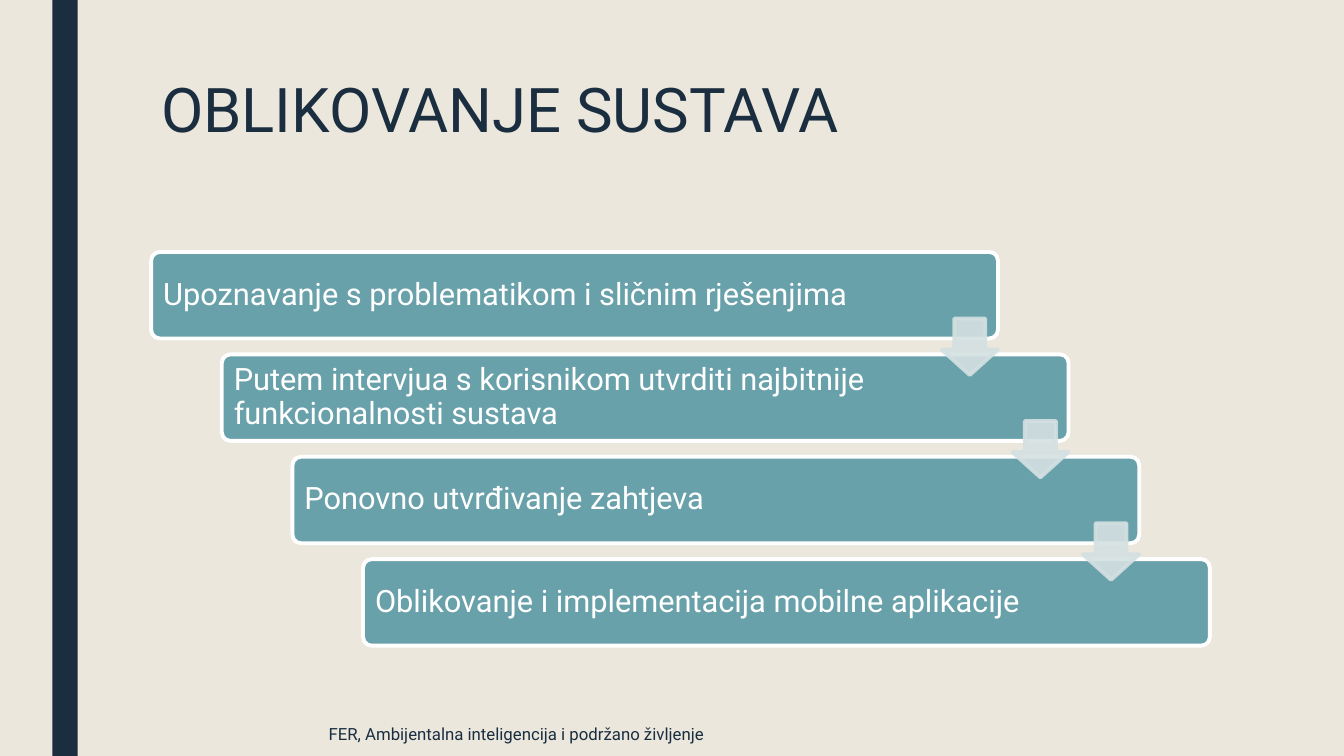
from lxml.etree import SubElement
from pptx import Presentation
from pptx.dml.color import RGBColor
from pptx.enum.shapes import MSO_SHAPE
from pptx.enum.text import MSO_ANCHOR, PP_ALIGN
from pptx.oxml.ns import qn
from pptx.util import Cm, Pt

NAVY, TEAL, PALE, WHITE, SAND = "1A2E40", "69A1AB", "D4E0E2", "FFFFFF", "EBE7DD"
STEPS = [
    "Upoznavanje s problematikom i sličnim rješenjima",
    "Putem intervjua s korisnikom utvrditi najbitnije funkcionalnosti sustava",
    "Ponovno utvrđivanje zahtjeva",
    "Oblikovanje i implementacija mobilne aplikacije",
]


def rgb(value):
    return RGBColor.from_string(value)


class Deck:
    font = "Roboto"
    outline = Pt(2.75)

    def __init__(self, slide):
        self.s = slide
        fill = slide.background.fill
        fill.solid()
        fill.fore_color.rgb = rgb(SAND)

    def shape(self, kind, x, y, w, h, fill, line=None, adj=()):
        sp = self.s.shapes.add_shape(kind, Cm(x), Cm(y), Cm(w), Cm(h))
        sp.shadow.inherit = False
        sp.fill.solid()
        sp.fill.fore_color.rgb = rgb(fill)
        if line:
            sp.line.color.rgb = rgb(line)
            sp.line.width = self.outline
        else:
            sp.line.fill.background()
        for i, value in enumerate(adj):
            sp.adjustments[i] = value
        return sp

    def label(self, sp, text, size, color, anchor, spacing=1.0):
        tf = sp.text_frame
        tf.text = text
        tf.word_wrap = True
        tf.vertical_anchor = anchor
        p = tf.paragraphs[0]
        p.alignment = PP_ALIGN.LEFT
        p.line_spacing = spacing
        r = p.runs[0]
        r.font.name = self.font
        r.font.size = Pt(size)
        r.font.color.rgb = rgb(color)

    def text(self, x, y, w, h, text, size, anchor, spacing=1.0):
        sp = self.s.shapes.add_textbox(Cm(x), Cm(y), Cm(w), Cm(h))
        self.label(sp, text, size, NAVY, anchor, spacing)

    def step(self, x, y, w, h, text):
        sp = self.shape(MSO_SHAPE.ROUNDED_RECTANGLE, x, y, w, h, TEAL, WHITE, [0.1])
        tf = sp.text_frame
        tf.margin_left, tf.margin_right = Cm(0.24), Cm(3.4)
        self.label(sp, text, 22, WHITE, MSO_ANCHOR.MIDDLE, 0.9)

    def arrow(self, x, y, size):
        sp = self.shape(MSO_SHAPE.DOWN_ARROW, x, y, size, size, PALE, PALE, [0.55, 0.45])
        # Fill and outline are both slightly see-through
        for color in sp.element.spPr.iter(qn("a:srgbClr")):
            SubElement(color, qn("a:alpha"), val="90000")


def main():
    prs = Presentation()
    prs.slide_width, prs.slide_height = Cm(33.87), Cm(19.05)
    deck = Deck(prs.slides.add_slide(prs.slide_layouts[6]))

    # Side bar and title
    deck.shape(MSO_SHAPE.RECTANGLE, 1.32, 0, 0.64, 19.05, NAVY)
    deck.text(3.81, 1.9, 26.67, 4.11, "OBLIKOVANJE SUSTAVA", 44, MSO_ANCHOR.TOP, 0.89)

    # Staircase of steps
    left, top, width, height = 3.81, 6.35, 21.34, 2.18
    dx, dy = 1.78, 2.58
    for i, text in enumerate(STEPS):
        deck.step(left + i * dx, top + i * dy, width, height, text)

    # Arrows at the right end of every step but the last
    size = 1.42
    for i in range(len(STEPS) - 1):
        deck.arrow(left + width - size + i * dx, 8.03 + i * dy, size)

    # Footer
    deck.text(8.03, 17.93, 17.45, 1.12,
              "FER, Ambijentalna inteligencija i podržano življenje", 12, MSO_ANCHOR.MIDDLE)

    prs.save("out.pptx")


if __name__ == "__main__":
    main()
